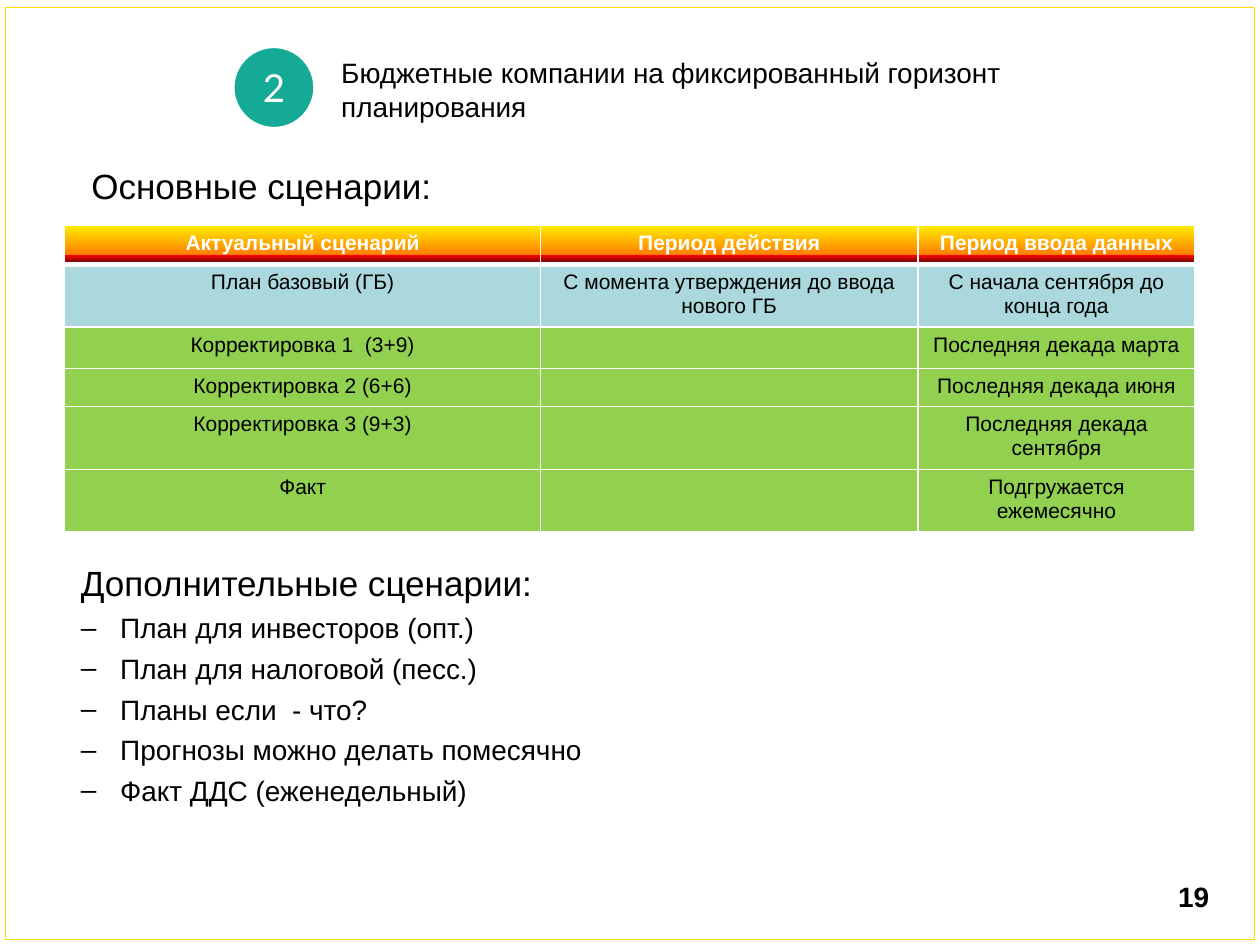
from lxml import etree
from pptx import Presentation
from pptx.dml.color import RGBColor
from pptx.enum.shapes import MSO_SHAPE
from pptx.enum.text import MSO_ANCHOR, MSO_AUTO_SIZE, PP_ALIGN
from pptx.oxml import parse_xml
from pptx.oxml.ns import nsdecls, qn
from pptx.util import Pt

LEFT, CENTER, RIGHT = PP_ALIGN.LEFT, PP_ALIGN.CENTER, PP_ALIGN.RIGHT
TOP, MIDDLE = MSO_ANCHOR.TOP, MSO_ANCHOR.MIDDLE
NO_AUTOSIZE = MSO_AUTO_SIZE.NONE
RECTANGLE, OVAL = MSO_SHAPE.RECTANGLE, MSO_SHAPE.OVAL

BLACK = RGBColor(0x00, 0x00, 0x00)
WHITE = RGBColor(0xFF, 0xFF, 0xFF)
YELLOW = RGBColor(0xFF, 0xDE, 0x07)
TEAL = RGBColor(0x14, 0xAA, 0x96)
BLUE = RGBColor(0x72, 0xBF, 0xC5)
GREEN = RGBColor(0x92, 0xD0, 0x50)
HEADER_STOPS = [
    (0, RGBColor(0xFF, 0xF2, 0x00)),
    (77, RGBColor(0xFF, 0x7A, 0x00)),
    (77, RGBColor(0xFF, 0x03, 0x00)),
    (100, RGBColor(0x4D, 0x08, 0x08)),
]


def format_text(para, size, color=BLACK, align=LEFT, bold=False, font="Arial"):
    para.alignment = align
    for span in para.runs:
        span.font.name = font
        span.font.size = Pt(size)
        span.font.bold = bold
        span.font.color.rgb = color


def place(box, left, top, width, height):
    box.left, box.top = Pt(left), Pt(top)
    box.width, box.height = Pt(width), Pt(height)
    box.text_frame.word_wrap = True
    box.text_frame.auto_size = NO_AUTOSIZE
    box.text_frame.vertical_anchor = TOP


deck = Presentation()
deck.slide_width, deck.slide_height = Pt(720), Pt(540)
page = deck.slides.add_slide(deck.slide_layouts[3])
title, main_heading, extra_list = page.placeholders

frame = page.shapes.add_shape(RECTANGLE, Pt(3), Pt(4), Pt(714), Pt(533))
frame.shadow.inherit = False
frame.fill.background()
frame.line.color.rgb = YELLOW
frame.line.width = Pt(0.5)

place(title, 195, 32, 460, 39)
title_text = title.text_frame
title_text.margin_left = title_text.margin_right = 0
title_text.margin_top = title_text.margin_bottom = 0
title_text.text = "Бюджетные компании на фиксированный горизонт планирования"
format_text(title_text.paragraphs[0], 16)

badge = page.shapes.add_shape(OVAL, Pt(133.5), Pt(27), Pt(46), Pt(46))
badge.shadow.inherit = False
badge.fill.solid()
badge.fill.fore_color.rgb = TEAL
badge.line.color.rgb = WHITE
badge.line.width = Pt(1)
badge.text_frame.vertical_anchor = MIDDLE
badge.text_frame.text = "2"
format_text(badge.text_frame.paragraphs[0], 22, WHITE, CENTER, font="Lato")

place(main_heading, 9, 90.5, 702, 32)
main_heading.text_frame.text = "Основные сценарии:"

place(extra_list, 3, 317.5, 702, 150)
extra_list.text_frame.text = "\n".join([
    "Дополнительные сценарии:",
    "План для инвесторов (опт.)",
    "План для налоговой (песс.)",
    "Планы если  - что?",
    "Прогнозы можно делать помесячно",
    "Факт ДДС (еженедельный)",
])

for box in (main_heading, extra_list):
    for index, para in enumerate(box.text_frame.paragraphs):
        para.space_before = Pt(4 if index else 0)
        properties = para._p.get_or_add_pPr()
        properties.set("marL", str(Pt(58.5 if index else 36)))
        properties.set("indent", str(Pt(-22.5 if index else 0)))
        if index:
            etree.SubElement(properties, qn("a:buChar")).set("char", "–")
        else:
            etree.SubElement(properties, qn("a:buNone"))
        format_text(para, 16 if index else 20)

rows = [
    ("Актуальный сценарий", "Период действия", "Период ввода данных"),
    ("План базовый (ГБ)", "С момента утверждения до ввода нового ГБ", "С начала сентября до конца года"),
    ("Корректировка 1  (3+9)", "", "Последняя декада марта"),
    ("Корректировка 2 (6+6)", "", "Последняя декада июня"),
    ("Корректировка 3 (9+3)", "", "Последняя декада сентября"),
    ("Факт", "", "Подгружается ежемесячно"),
]
column_widths = [272, 215.5, 158.5]
row_heights = [22.5, 36, 23.5, 21.5, 36, 35.5]
table = page.shapes.add_table(
    len(rows), 3, Pt(37), Pt(128.5), Pt(sum(column_widths)), Pt(sum(row_heights))
).table
table.horz_banding = False
for column, width in zip(table.columns, column_widths):
    column.width = Pt(width)

stops = "".join(
    f'<a:gs pos="{position * 1000}"><a:srgbClr val="{color}"/></a:gs>'
    for position, color in HEADER_STOPS
)
header_fill = (
    f'<a:gradFill {nsdecls("a")}><a:gsLst>{stops}</a:gsLst>'
    '<a:lin ang="5400000" scaled="0"/></a:gradFill>'
)

for row_index, texts in enumerate(rows):
    table.rows[row_index].height = Pt(row_heights[row_index])
    is_header = row_index == 0
    for column_index, text in enumerate(texts):
        cell = table.cell(row_index, column_index)
        para = cell.text_frame.paragraphs[0]
        if text:
            para.text = text
            format_text(para, 12, WHITE if is_header else BLACK, CENTER, is_header)
        else:
            etree.SubElement(para._p, qn("a:endParaRPr")).set("sz", "1200")

        properties = cell._tc.get_or_add_tcPr()
        for side in "LRTB":
            thick = (row_index, side) in [(0, "B"), (1, "T")]
            properties.append(parse_xml(
                f'<a:ln{side} {nsdecls("a")} w="{Pt(3 if thick else 1)}">'
                f'<a:solidFill><a:srgbClr val="{WHITE}"/></a:solidFill></a:ln{side}>'
            ))
        if is_header:
            properties.append(parse_xml(header_fill))
            continue
        cell.fill.solid()
        cell.fill.fore_color.rgb = BLUE if row_index == 1 else GREEN
        if row_index == 1:
            shade = properties.find(qn("a:solidFill")).find(qn("a:srgbClr"))
            etree.SubElement(shade, qn("a:alpha")).set("val", "60000")

number = page.shapes.add_textbox(Pt(644), Pt(499), Pt(54), Pt(28))
number.text_frame.word_wrap = True
number.text_frame.text = "19"
format_text(number.text_frame.paragraphs[0], 16, align=RIGHT, bold=True)

deck.save("out.pptx")
